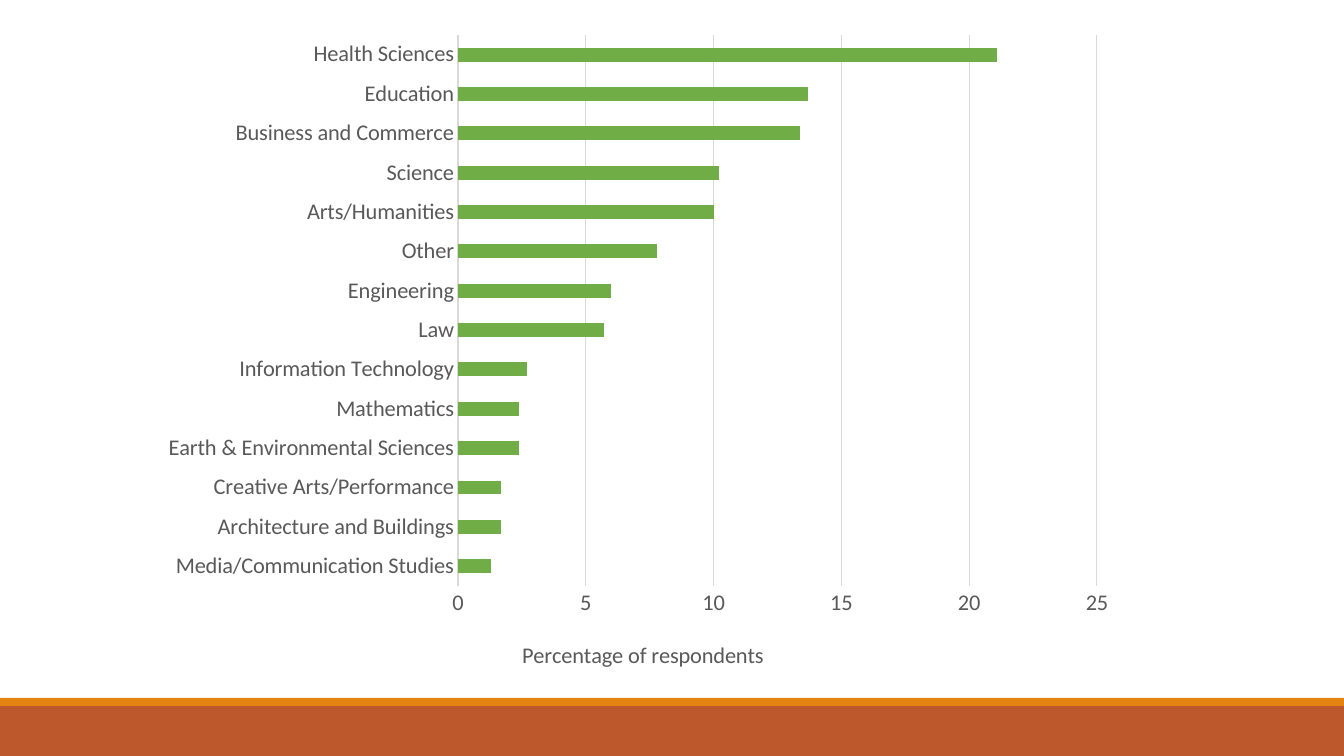
"""Build a slide with a bar chart of respondents by field of study."""
from lxml import etree
from pptx import Presentation
from pptx import util as u
from pptx.chart.data import CategoryChartData
from pptx.dml.color import RGBColor
from pptx.enum import chart as charts, shapes
from pptx.oxml.ns import qn

PX = 914400 / 100.8
RUST = RGBColor(0xBD, 0x58, 0x2C)
ORANGE = RGBColor(0xE4, 0x83, 0x12)
GREEN = RGBColor(0x70, 0xAD, 0x47)
GRAY = RGBColor(0x59, 0x59, 0x59)
LIGHT_GRAY = RGBColor(0xD9, 0xD9, 0xD9)

CHART_BOX = (149, 22, 979, 662)
RESPONDENTS = {
    "Media/Communication Studies": 1.3,
    "Architecture and Buildings": 1.7,
    "Creative Arts/Performance": 1.7,
    "Earth & Environmental Sciences": 2.4,
    "Mathematics": 2.4,
    "Information Technology": 2.7,
    "Law": 5.7,
    "Engineering": 6,
    "Other": 7.8,
    "Arts/Humanities": 10,
    "Science": 10.2,
    "Business and Commerce": 13.4,
    "Education": 13.7,
    "Health Sciences": 21.1,
}


def px(*lengths):
    """Turn pixel lengths into EMU."""
    return [u.Emu(round(length * PX)) for length in lengths]


def place(parent, index, settings):
    """Give a chart part a manual layout."""
    for old in parent.findall(qn("c:layout")):
        parent.remove(old)
    layout = etree.Element(qn("c:layout"))
    manual = etree.SubElement(layout, qn("c:manualLayout"))
    for name, value in settings.items():
        etree.SubElement(manual, qn(f"c:{name}")).set("val", str(value))
    parent.insert(index, layout)


presentation = Presentation()
presentation.slide_width, presentation.slide_height = px(1344, 756)
slide = presentation.slides.add_slide(presentation.slide_layouts[6])

for top, height, color in ((706, 50, RUST), (698, 8, ORANGE)):
    band = slide.shapes.add_shape(
        shapes.MSO_SHAPE.RECTANGLE, *px(0, top, 1344, height))
    band.shadow.inherit = False
    band.fill.solid()
    band.fill.fore_color.rgb = color
    band.line.fill.background()

chart_data = CategoryChartData()
chart_data.categories = list(RESPONDENTS)
chart_data.add_series("Series 1", list(RESPONDENTS.values()))
chart = slide.shapes.add_chart(
    charts.XL_CHART_TYPE.BAR_CLUSTERED, *px(*CHART_BOX), chart_data).chart
chart.has_legend = False
chart.has_title = False
chart.font.name = "Calibri"
chart.font.size = u.Pt(10)

plot = chart.plots[0]
plot.gap_width = 182
plot.vary_by_categories = False
bars = plot.series[0].format.fill
bars.solid()
bars.fore_color.rgb = GREEN

category_axis, value_axis = chart.category_axis, chart.value_axis
value_axis.minimum_scale = 0
value_axis.maximum_scale = 25
value_axis.major_unit = 5
value_axis.has_major_gridlines = True
category_axis.has_major_gridlines = False
value_axis.tick_labels.number_format = "#,##0"
value_axis.tick_labels.number_format_is_linked = False
value_axis.axis_title.text_frame.text = "Percentage of respondents"
title_font = value_axis.axis_title.text_frame.paragraphs[0].runs[0].font
title_font.bold = False

for axis in (category_axis, value_axis):
    axis.major_tick_mark = charts.XL_TICK_MARK.NONE
    axis.minor_tick_mark = charts.XL_TICK_MARK.NONE
for font in (category_axis.tick_labels.font, value_axis.tick_labels.font, title_font):
    font.name = "Calibri"
    font.size = u.Pt(16)
    font.color.rgb = GRAY
for line in (category_axis.format.line, value_axis.major_gridlines.format.line):
    line.color.rgb = LIGHT_GRAY
    line.width = u.Pt(0.75)
value_axis.format.line.fill.background()

left, top, width, height = CHART_BOX
place(plot._element.getparent(), 0, {
    "layoutTarget": "inner", "xMode": "edge", "yMode": "edge",
    "x": (458 - left) / width, "y": (35 - top) / height,
    "w": 639 / width, "h": 551 / height})
place(value_axis.axis_title._element, 1, {
    "xMode": "edge", "yMode": "edge",
    "x": (518 - left) / width, "y": (636 - top) / height})

presentation.save("out.pptx")
